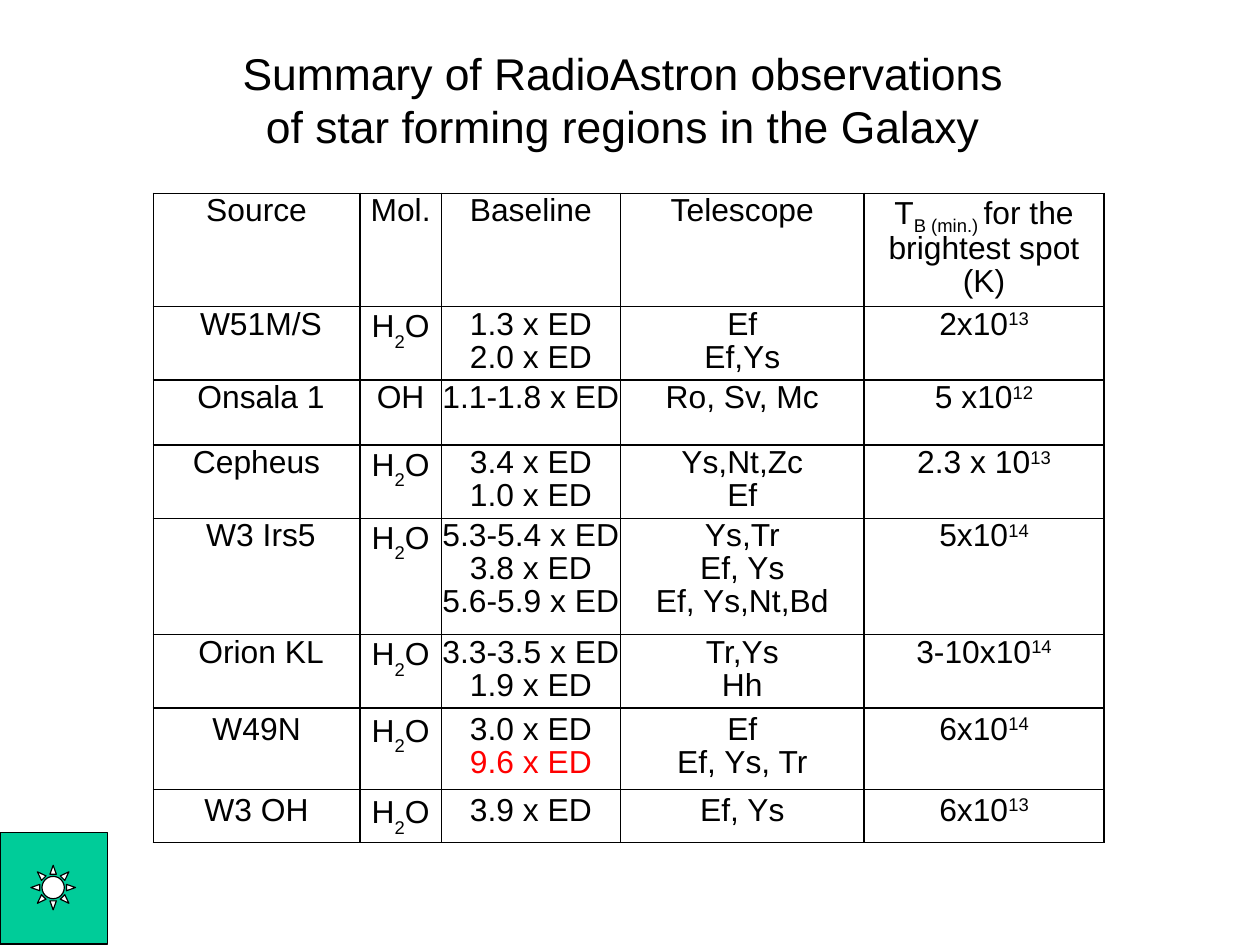
from lxml import etree
from pptx import Presentation
from pptx.dml.color import RGBColor
from pptx.enum.shapes import MSO_SHAPE as Preset
from pptx.enum.text import MSO_AUTO_SIZE as AutoSize, PP_ALIGN as Align
from pptx.oxml.ns import qn
from pptx.util import Cm, Inches, Pt

TITLE = ["Summary of RadioAstron observations ", "of star forming regions in the Galaxy "]
WATER = [("H", 0), ("2", -33), ("O", 0)]
BRIGHTNESS = [("T", 0), ("B (min.) ", -25), ("for the brightest spot (K)", 0)]
HEADERS = ["Source", "Mol.", "Baseline", "Telescope", BRIGHTNESS]
OBSERVATIONS = [
    (" W51M/S", WATER, ["1.3 x ED", "2.0 x ED"], ["Ef", "Ef,Ys"], ("2x10", "13")),
    (" Onsala 1", "OH", ["1.1-1.8 x ED"], ["Ro, Sv, Mc"], ("5 x10", "12")),
    (" Cepheus ", WATER, ["3.4 x ED", "1.0 x ED"], ["Ys,Nt,Zc", "Ef"], ("2.3 x 10", "13")),
    (" W3 Irs5", WATER, ["5.3-5.4 x ED", "3.8 x ED", "5.6-5.9 x ED"],
     ["Ys,Tr", "Ef, Ys", "Ef, Ys,Nt,Bd"], ("5x10", "14")),
    (" Orion KL", WATER, ["3.3-3.5 x ED", "1.9 x ED"], ["Tr,Ys", "Hh"], ("3-10x10", "14")),
    ("W49N", WATER, ["3.0 x ED", "9.6 x ED"], ["Ef", "Ef, Ys, Tr"], ("6x10", "14")),
    ("W3 OH", WATER, ["3.9 x ED"], ["Ef, Ys"], ("6x10", "13")),
]
RECORD_BASELINE = "9.6 x ED"
TABLE_BOX = (1.34, 1.69, 8.32, 5.57)
COLUMN_WIDTHS = [1.81, 0.71, 1.57, 2.13, 2.1]
ROW_HEIGHTS = [0.57, 0.57, 0.57, 0.57, 1.02, 0.64, 0.64, 0.36]
TIGHT_MARGINS = (0, 0.02, 0, 0)
PADDED_MARGINS = (0.04, 0.05, 0.04, 0.04)
FIRST_PADDED_ROW = 6
ORNAMENTS = [
    (Preset.RECTANGLE, (0, 7.28, 0.94, 0.98), "00CC99"),
    (Preset.SUN, (0.27, 7.57, 0.39, 0.39), "FFFFFF"),
]


def color(value):
    return RGBColor.from_string(value)


def format_font(font, size, value):
    font.name = "Arial"
    font.size = Pt(size)
    font.color.rgb = color(value)


def write_lines(text_frame, lines, size, spacing=None):
    for index, line in enumerate(lines):
        paragraph = text_frame.paragraphs[0] if index == 0 else text_frame.add_paragraph()
        paragraph.alignment = Align.CENTER
        if spacing:
            paragraph.line_spacing = spacing
        for text, baseline in [(line, 0)] if isinstance(line, str) else line:
            run = paragraph.add_run()
            run.text = text
            format_font(run.font, size, "FF0000" if text == RECORD_BASELINE else "000000")
            if baseline:
                run.font._element.set("baseline", str(baseline * 1000))


def add_borders(cell):
    properties = cell._tc.get_or_add_tcPr()
    for side in ("a:lnL", "a:lnR", "a:lnT", "a:lnB"):
        border = etree.SubElement(properties, qn(side), w=str(Pt(1)))
        fill = etree.SubElement(border, qn("a:solidFill"))
        etree.SubElement(fill, qn("a:srgbClr"), val="000000")


def fill_cell(cell, lines, margins):
    cell.margin_left, cell.margin_top, cell.margin_right, cell.margin_bottom = map(Inches, margins)
    write_lines(cell.text_frame, lines, 20, 0.93)
    add_borders(cell)
    cell.fill.solid()
    cell.fill.fore_color.rgb = color("FFFFFF")


def add_title(slide):
    title = slide.shapes.add_textbox(*map(Inches, (1.98, 0.35, 7.04, 1.04)))
    title.text_frame.word_wrap = False
    title.text_frame.auto_size = AutoSize.SHAPE_TO_FIT_TEXT
    write_lines(title.text_frame, TITLE, 28)


def add_observations(slide):
    rows = [[[header] for header in HEADERS]]
    for source, molecule, baselines, telescopes, (number, exponent) in OBSERVATIONS:
        rows.append([[source], [molecule], baselines, telescopes, [[(number, 0), (exponent, 30)]]])
    frame = slide.shapes.add_table(len(rows), len(HEADERS), *map(Inches, TABLE_BOX))
    table = frame.table
    table.first_row = table.horz_banding = False
    for column, width in zip(table.columns, COLUMN_WIDTHS):
        column.width = Inches(width)
    for row_index, (row, height) in enumerate(zip(rows, ROW_HEIGHTS)):
        table.rows[row_index].height = Inches(height)
        margins = PADDED_MARGINS if row_index >= FIRST_PADDED_ROW else TIGHT_MARGINS
        for column_index, lines in enumerate(row):
            fill_cell(table.cell(row_index, column_index), lines, margins)
    frame.height = Inches(TABLE_BOX[3])


def add_ornaments(slide):
    for preset, box, fill in ORNAMENTS:
        shape = slide.shapes.add_shape(preset, *map(Inches, box))
        shape.shadow.inherit = False
        shape.fill.solid()
        shape.fill.fore_color.rgb = color(fill)
        shape.line.color.rgb = color("000000")
        shape.line.width = Pt(0.75)


def main():
    presentation = Presentation()
    presentation.slide_width = Cm(28)
    presentation.slide_height = Cm(21)
    slide = presentation.slides.add_slide(presentation.slide_layouts[6])
    add_title(slide)
    add_observations(slide)
    add_ornaments(slide)
    presentation.save("out.pptx")


if __name__ == "__main__":
    main()
